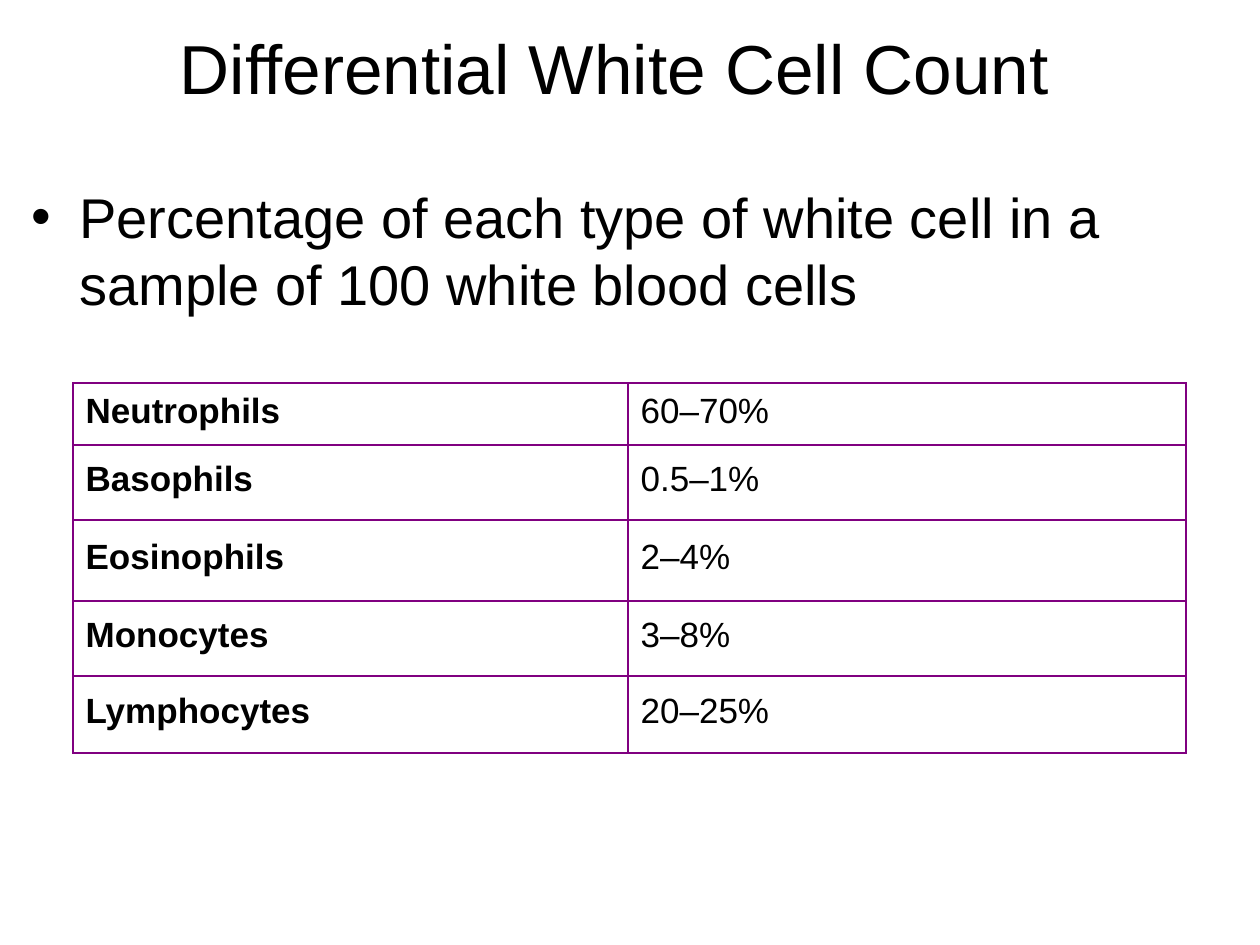
from pptx import Presentation, util as u
from pptx.dml.color import RGBColor
from pptx.enum import text
from pptx.oxml import parse_xml
from pptx.oxml.ns import nsdecls

PX = 914400 / 126
BLACK, WHITE, PURPLE = "000000", "FFFFFF", "800080"
COLS = [555, 558]
ROWS = [62, 75, 81, 75, 77]
COUNTS = [
    ("Neutrophils", "60–70%"),
    ("Basophils", "0.5–1%"),
    ("Eosinophils", "2–4%"),
    ("Monocytes", "3–8%"),
    ("Lymphocytes", "20–25%"),
]


def px(n):
    """Turn pixels into EMU."""
    return u.Emu(round(n * PX))


def color(value):
    """Turn a hex string into a colour."""
    return RGBColor.from_string(value)


def write(tf, words, size, bold=False, align=text.PP_ALIGN.LEFT,
          anchor=text.MSO_ANCHOR.TOP, spacing=None, before=0):
    """Put one formatted paragraph in a text frame and return it."""
    tf.word_wrap = True
    tf.vertical_anchor = anchor
    p = tf.paragraphs[0]
    p.alignment = align
    p.line_spacing = spacing
    p.space_before = u.Pt(before)
    r = p.add_run()
    r.text = words
    r.font.name = "Arial"
    r.font.size = u.Pt(size)
    r.font.bold = bold
    r.font.color.rgb = color(BLACK)
    return p


def add_text(s, words, x, y, w, h, **fmt):
    """Add a text box and return its paragraph."""
    box = s.shapes.add_textbox(px(x), px(y), px(w), px(h))
    return write(box.text_frame, words, **fmt)


def add_bullet(p, indent):
    """Give a paragraph a round bullet with a hanging indent."""
    pPr = p._p.get_or_add_pPr()
    pPr.set("marL", str(px(indent)))
    pPr.set("indent", str(-px(indent)))
    pPr.append(parse_xml(f'<a:buFont {nsdecls("a")} typeface="Arial"/>'))
    pPr.append(parse_xml(f'<a:buChar {nsdecls("a")} char="•"/>'))


def add_borders(cell, value, width):
    """Draw a solid line on all four sides of a cell."""
    tcPr = cell._tc.get_or_add_tcPr()
    for i, side in enumerate(("lnL", "lnR", "lnT", "lnB")):
        tcPr.insert(i, parse_xml(
            f'<a:{side} {nsdecls("a")} w="{u.Pt(width)}"><a:solidFill>'
            f'<a:srgbClr val="{value}"/></a:solidFill></a:{side}>'))


def add_count_table(s, x, y):
    """Add the table of cell types and their percentages."""
    frame = s.shapes.add_table(len(ROWS), len(COLS), px(x), px(y),
                               px(sum(COLS)), px(sum(ROWS)))
    table = frame.table
    table.first_row = table.horz_banding = False
    for col, w in zip(table.columns, COLS):
        col.width = px(w)
    for row, h, values in zip(table.rows, ROWS, COUNTS):
        row.height = px(h)
        for i, (cell, words) in enumerate(zip(row.cells, values)):
            cell.fill.solid()
            cell.fill.fore_color.rgb = color(WHITE)
            cell.vertical_anchor = text.MSO_ANCHOR.MIDDLE
            write(cell.text_frame, words, 20, bold=i == 0, spacing=0.8,
                  anchor=text.MSO_ANCHOR.MIDDLE)
            add_borders(cell, PURPLE, 1)


def main():
    """Build the slide and save it."""
    prs = Presentation()
    prs.slide_width, prs.slide_height = px(1260), px(945)
    s = prs.slides.add_slide(prs.slide_layouts[6])
    p = add_text(s, "Percentage of each type of white cell in a sample of 100 white blood cells",
                 19, 176, 1197, 718, size=32, before=6.4)
    add_bullet(p, 48)
    add_count_table(s, 73, 383)
    add_text(s, "Differential White Cell Count", 16, 14, 1197, 105, size=39.6,
             align=text.PP_ALIGN.CENTER, anchor=text.MSO_ANCHOR.MIDDLE)
    prs.save("out.pptx")


if __name__ == "__main__":
    main()
